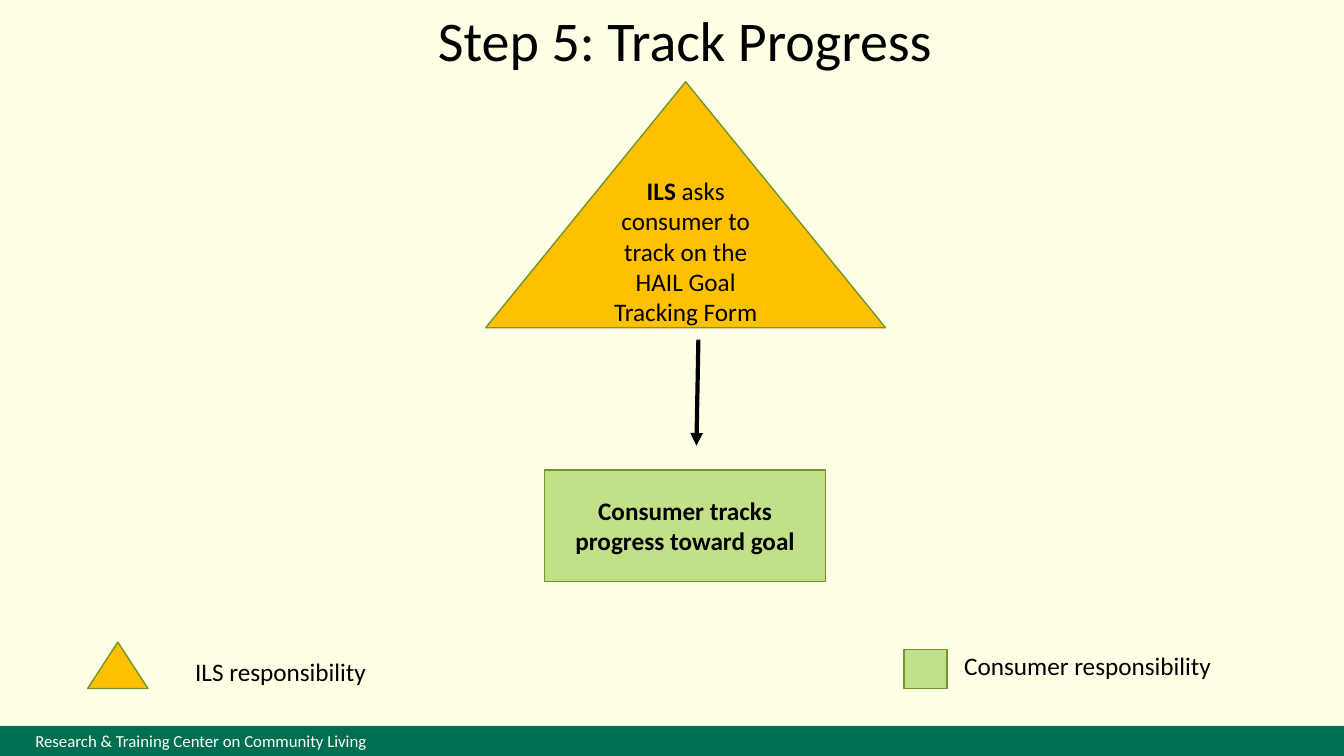
"""Build the Step 5 slide: a two-step flow, its key and a footer band."""
from dataclasses import dataclass

from lxml import etree
from pptx import Presentation
from pptx.dml.color import RGBColor
from pptx.enum.shapes import MSO_CONNECTOR, MSO_SHAPE
from pptx.enum.text import MSO_ANCHOR, PP_ALIGN
from pptx.oxml.ns import qn
from pptx.util import Cm, Pt

TRIANGLE = MSO_SHAPE.ISOSCELES_TRIANGLE
RECTANGLE = MSO_SHAPE.RECTANGLE
STRAIGHT = MSO_CONNECTOR.STRAIGHT
LEFT, CENTER = PP_ALIGN.LEFT, PP_ALIGN.CENTER
MIDDLE = MSO_ANCHOR.MIDDLE

TITLE = "Step 5: Track Progress"
FOOTER = "Research & Training Center on Community Living"
ASK_RUNS = [("ILS ", True),
            ("asks consumer to track on the HAIL Goal Tracking Form", False)]
TRACK_RUNS = [("Consumer tracks progress toward goal", True)]

SLIDE_SIZE = (33.87, 19.05)
TITLE_BOX = (8.99, 0, 16.54, 1.96)
ASK_BOX = (12.24, 2.06, 10.08, 6.2)
TRACK_BOX = (13.72, 11.84, 7.09, 2.82)
ARROW_ENDS = (17.6, 8.56, 17.55, 11.23)
FOOTER_HEIGHT = 0.76


@dataclass(frozen=True)
class Theme:
    """Colours, type sizes and font of the slide."""
    background: str = "FFFFE5"
    footer: str = "006F51"
    ils: str = "FFC000"
    consumer: str = "C2E088"
    outline: str = "719629"
    ink: str = "000000"
    paper: str = "FFFFFF"
    font: str = "Calibri"
    title_size: int = 40
    body_size: int = 18
    footer_size: int = 12


THEME = Theme()
KEY = [
    (TRIANGLE, THEME.ils, (2.21, 16.18, 1.52, 1.17),
     "ILS responsibility", (4.67, 16.41, 4.85, 1.02)),
    (RECTANGLE, THEME.consumer, (22.78, 16.36, 1.09, 0.99),
     "Consumer responsibility", (24.05, 16.26, 6.81, 1.02)),
]


def lengths(values):
    """Turn centimetre numbers into lengths."""
    return [Cm(value) for value in values]


def write(shape, runs, size=THEME.body_size, color=THEME.ink, align=CENTER,
          wrap=True, insets=(0.25, 0.13, 0.25, 0.13)):
    """Put formatted runs into the shape's first paragraph."""
    frame = shape.text_frame
    frame.word_wrap = wrap
    frame.vertical_anchor = MIDDLE
    (frame.margin_left, frame.margin_top,
     frame.margin_right, frame.margin_bottom) = lengths(insets)
    paragraph = frame.paragraphs[0]
    paragraph.alignment = align
    for text, bold in runs:
        run = paragraph.add_run()
        run.text = text
        run.font.name = THEME.font
        run.font.size = Pt(size)
        run.font.bold = bold
        run.font.color.rgb = RGBColor.from_string(color)


def add_block(slide, kind, box, fill, outlined=True):
    """Add a flat filled shape."""
    shape = slide.shapes.add_shape(kind, *lengths(box))
    shape.shadow.inherit = False
    shape.fill.solid()
    shape.fill.fore_color.rgb = RGBColor.from_string(fill)
    if outlined:
        shape.line.color.rgb = RGBColor.from_string(THEME.outline)
        shape.line.width = Pt(1)
    else:
        shape.line.fill.background()
    return shape


def add_arrow(slide, ends):
    """Add the arrow between the two steps."""
    arrow = slide.shapes.add_connector(STRAIGHT, *lengths(ends))
    arrow.line.color.rgb = RGBColor.from_string(THEME.ink)
    arrow.line.width = Pt(3)
    properties = arrow.element.spPr
    outline = properties.find(qn("a:ln"))
    etree.SubElement(outline, qn("a:tailEnd"), type="triangle")
    etree.SubElement(properties, qn("a:effectLst"))


def main():
    """Compose and save the slide."""
    presentation = Presentation()
    presentation.slide_width, presentation.slide_height = lengths(SLIDE_SIZE)
    slide = presentation.slides.add_slide(presentation.slide_layouts[5])
    slide.background.fill.solid()
    slide.background.fill.fore_color.rgb = RGBColor.from_string(THEME.background)

    width, height = SLIDE_SIZE
    footer_box = (0, height - FOOTER_HEIGHT, width, FOOTER_HEIGHT)
    footer = add_block(slide, RECTANGLE, footer_box, THEME.footer, outlined=False)
    write(footer, [(FOOTER, False)], THEME.footer_size, THEME.paper, LEFT,
          insets=(0.89, 0, 0.25, 0))

    title = slide.shapes.title
    title.left, title.top, title.width, title.height = lengths(TITLE_BOX)
    write(title, [(TITLE, False)], THEME.title_size)

    ask = add_block(slide, TRIANGLE, ASK_BOX, THEME.ils)
    write(ask, ASK_RUNS, insets=(0.5, 0.13, 0.5, 0.9))
    track = add_block(slide, RECTANGLE, TRACK_BOX, THEME.consumer)
    write(track, TRACK_RUNS)
    add_arrow(slide, ARROW_ENDS)

    for kind, fill, box, label, label_box in KEY:
        add_block(slide, kind, box, fill)
        text_box = slide.shapes.add_textbox(*lengths(label_box))
        write(text_box, [(label, False)], align=LEFT, wrap=False)

    presentation.save("out.pptx")


if __name__ == "__main__":
    main()
